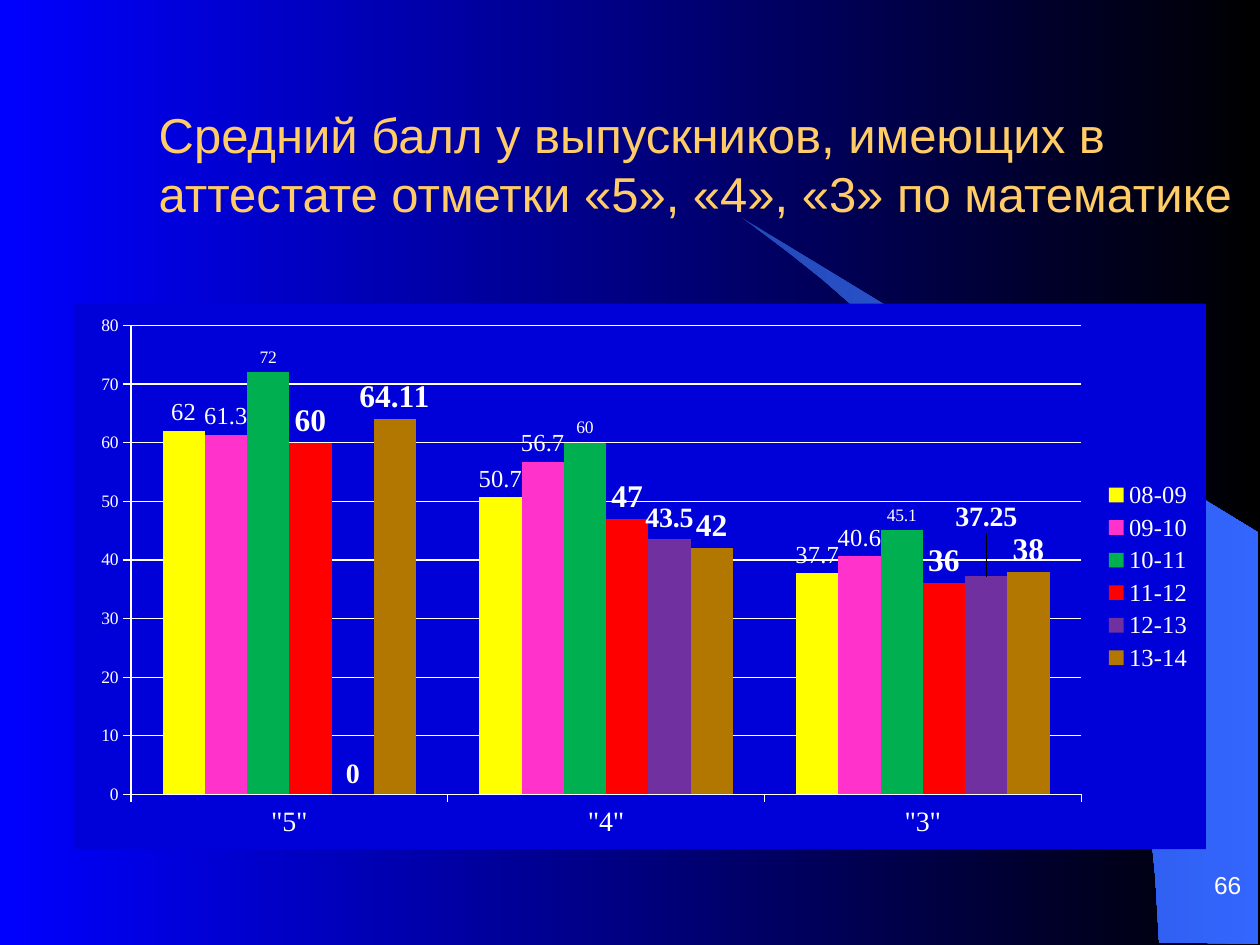
from lxml import etree
from pptx import Presentation
from pptx.chart.data import CategoryChartData
from pptx.dml.color import RGBColor
from pptx.enum.chart import XL_CHART_TYPE as ChartType
from pptx.enum.chart import XL_LABEL_POSITION as LabelPosition
from pptx.enum.chart import XL_LEGEND_POSITION as LegendPosition
from pptx.enum.chart import XL_TICK_MARK as TickMark
from pptx.enum.text import MSO_ANCHOR, PP_ALIGN
from pptx.oxml import parse_xml
from pptx.oxml.ns import nsdecls, qn
from pptx.util import Inches, Pt

WHITE = RGBColor(0xFF, 0xFF, 0xFF)
BLACK = RGBColor(0, 0, 0)
BLUE = RGBColor(0, 0, 0xFF)
GOLD = RGBColor(0xFF, 0xCC, 0x66)
CHART_BLUE = RGBColor(0, 0, 0xD9)
ARC_DARK = RGBColor(0x24, 0x49, 0xB6)
ARC_LIGHT = RGBColor(0x33, 0x66, 0xFF)

TITLE = "Средний балл у выпускников, имеющих в аттестате отметки «5», «4», «3» по математике"
PAGE_NUMBER = "66"
MARKS = ['"5"', '"4"', '"3"']
# year, average scores, bar colour, label size, label bold
YEARS = [
    ("08-09", (62, 50.7, 37.7), RGBColor(0xFF, 0xFF, 0), 14, False),
    ("09-10", (61.3, 56.7, 40.6), RGBColor(0xFF, 0x33, 0xCC), 14, False),
    ("10-11", (72, 60, 45.1), RGBColor(0, 0xB0, 0x50), 10, False),
    ("11-12", (60, 47, 36), RGBColor(0xFF, 0, 0), 18, True),
    ("12-13", (0, 43.5, 37.25), RGBColor(0x70, 0x30, 0xA0), 16, True),
    ("13-14", (64.11, 42, 38), RGBColor(0xB2, 0x77, 0), 18, True),
]
RAISED_YEAR, RAISED_MARK, RAISE = 4, 2, -0.07
PLOT_AREA = {"x": 0.05, "y": 0.04, "w": 0.84, "h": 0.86}
ARC = [
    (9.2, 7.48), (9.99, 7.49), (9.99, 4.23), (5.89, 1.73), (6.24, 1.99),
    (6.53, 2.22), (6.85, 2.5), (7.16, 2.8), (7.62, 3.3), (8.03, 3.84),
    (8.32, 4.31), (8.58, 4.79), (8.78, 5.28), (8.93, 5.72), (9.03, 6.09),
    (9.13, 6.56), (9.17, 6.96),
]


def set_gradient(fill, *colors):
    fill.gradient()
    fill.gradient_angle = 0
    for stop, position, color in zip(fill.gradient_stops, (0, 1), colors):
        stop.color.rgb = color
        stop.position = position


def set_font(font, size, color=WHITE, name="Times New Roman", bold=False):
    font.size, font.name, font.bold = Pt(size), name, bold
    font.color.rgb = color


def manual_layout(**settings):
    layout = parse_xml(f"<c:layout {nsdecls('c')}><c:manualLayout/></c:layout>")
    for name, value in settings.items():
        etree.SubElement(layout[0], qn(f"c:{name}")).set("val", str(value))
    return layout


def add_arc(slide):
    points = [(Inches(x), Inches(y)) for x, y in ARC]
    builder = slide.shapes.build_freeform(*points[0])
    builder.add_line_segments(points[1:], close=True)
    arc = builder.convert_to_shape()
    arc.shadow.inherit = False
    set_gradient(arc.fill, ARC_DARK, ARC_LIGHT)
    arc.line.fill.background()


def add_title(slide):
    title = slide.shapes.title
    title.left, title.top = Inches(1.16), Inches(0.67)
    title.width, title.height = Inches(8.84), Inches(1.25)
    frame = title.text_frame
    frame.text = TITLE
    frame.vertical_anchor = MSO_ANCHOR.MIDDLE
    frame.paragraphs[0].alignment = PP_ALIGN.LEFT
    set_font(frame.paragraphs[0].runs[0].font, 28, GOLD, "Arial")


def add_page_number(slide):
    box = slide.shapes.add_textbox(Inches(7.87), Inches(6.72), Inches(2.08), Inches(0.42))
    frame = box.text_frame
    frame.word_wrap = True
    frame.margin_top = frame.margin_bottom = 0
    frame.vertical_anchor = MSO_ANCHOR.BOTTOM
    frame.text = PAGE_NUMBER
    frame.paragraphs[0].alignment = PP_ALIGN.RIGHT
    set_font(frame.paragraphs[0].runs[0].font, 14, name="Arial")


def format_axes(chart):
    for axis, size in ((chart.category_axis, 16), (chart.value_axis, 10)):
        set_font(axis.tick_labels.font, size)
        axis.major_tick_mark = TickMark.OUTSIDE
        axis.minor_tick_mark = TickMark.NONE
        axis.format.line.color.rgb = WHITE
    chart.category_axis.has_major_gridlines = False
    scale = chart.value_axis
    scale.minimum_scale, scale.maximum_scale, scale.major_unit = 0, 80, 10
    scale.has_major_gridlines = True
    scale.major_gridlines.format.line.color.rgb = WHITE


def format_series(plot):
    for series, (_, _, color, size, bold) in zip(plot.series, YEARS):
        series.invert_if_negative = False
        series.format.fill.solid()
        series.format.fill.fore_color.rgb = color
        labels = series.data_labels
        labels.show_value = True
        labels.position = LabelPosition.OUTSIDE_END
        set_font(labels.font, size, bold=bold)


def raise_label(series, size):
    """Lift one label clear of its neighbours."""
    label = series.points[RAISED_MARK].data_label
    set_font(label.font, size, bold=True)
    label.position = LabelPosition.OUTSIDE_END
    element = series.data_labels._element.find(qn("c:dLbl"))
    element.insert(1, manual_layout(x=0, y=RAISE))


def add_score_chart(slide):
    data = CategoryChartData()
    data.categories = MARKS
    for year, scores, *_ in YEARS:
        data.add_series(year, scores)
    chart = slide.shapes.add_chart(
        ChartType.COLUMN_CLUSTERED, Inches(0.59), Inches(2.41),
        Inches(8.98), Inches(4.33), data).chart
    set_font(chart.font, 10)
    chart.has_title = False
    chart.has_legend = True
    chart.legend.position = LegendPosition.RIGHT
    chart.legend.include_in_layout = False
    set_font(chart.legend.font, 14)
    format_axes(chart)

    plot = chart.plots[0]
    plot.gap_width, plot.overlap, plot.vary_by_categories = 150, 0, False
    format_series(plot)
    raise_label(plot.series[RAISED_YEAR], YEARS[RAISED_YEAR][3])

    plot_area = chart._chartSpace.chart.plotArea
    for layout in plot_area.findall(qn("c:layout")):
        plot_area.remove(layout)
    plot_area.insert(0, manual_layout(
        layoutTarget="inner", xMode="edge", yMode="edge", **PLOT_AREA))
    chart._chartSpace.chart.addnext(parse_xml(
        f"<c:spPr {nsdecls('c', 'a')}><a:solidFill><a:srgbClr val='{CHART_BLUE}'/>"
        "</a:solidFill><a:ln><a:noFill/></a:ln></c:spPr>"))


def main():
    presentation = Presentation()
    presentation.slide_width, presentation.slide_height = Inches(10), Inches(7.5)
    slide = presentation.slides.add_slide(presentation.slide_layouts[5])
    set_gradient(slide.background.fill, BLUE, BLACK)
    add_arc(slide)
    add_page_number(slide)
    add_title(slide)
    add_score_chart(slide)
    presentation.save("out.pptx")


if __name__ == "__main__":
    main()
